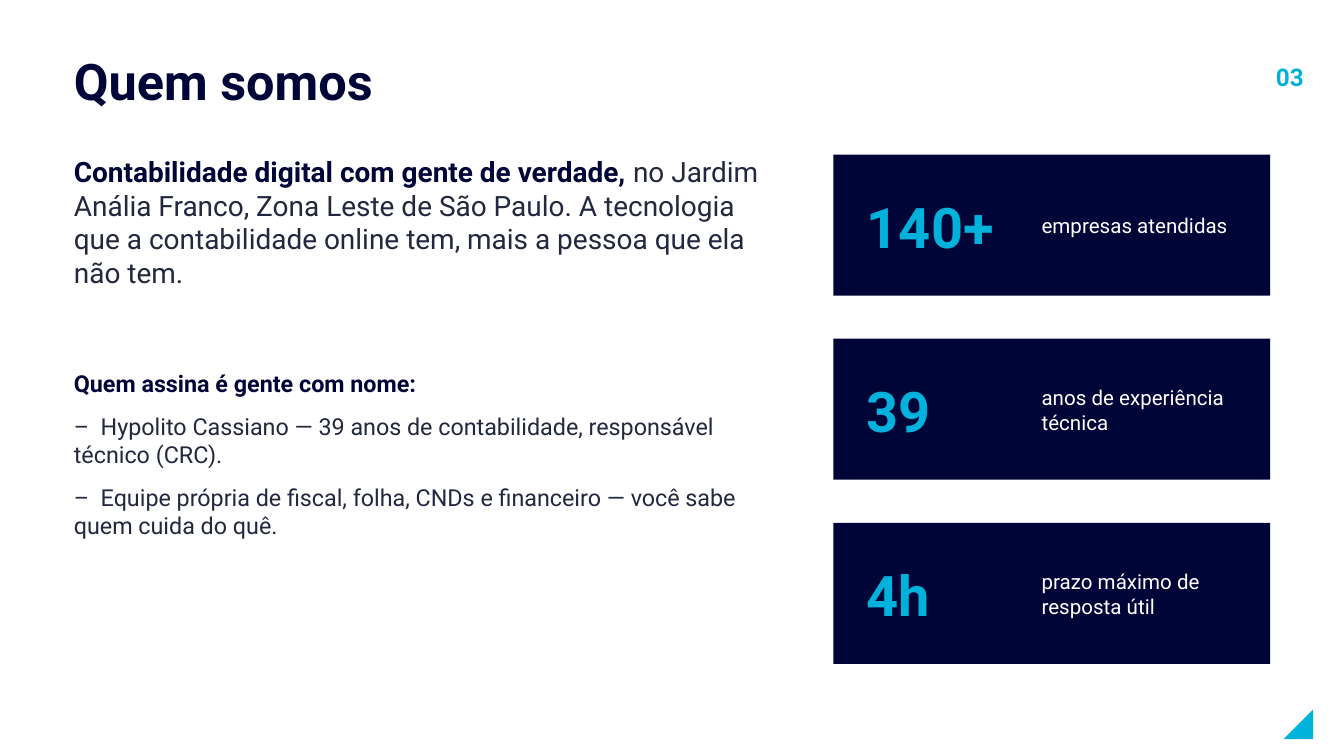
from dataclasses import dataclass
from typing import NamedTuple

from lxml.etree import SubElement
from pptx import Presentation
from pptx.dml.color import RGBColor
from pptx.enum.shapes import MSO_SHAPE
from pptx.enum.text import MSO_ANCHOR, PP_ALIGN
from pptx.oxml.ns import qn
from pptx.util import Inches, Pt


@dataclass(frozen=True)
class Theme:
    font: str = "Roboto"
    navy: str = "000538"
    cyan: str = "00B1DC"
    ink: str = "23283F"
    white: str = "FFFFFF"
    title: float = 27
    page: float = 13
    lead: float = 15
    body: float = 12.5
    stat: float = 30
    label: float = 11


class Box(NamedTuple):
    left: float
    top: float
    width: float
    height: float


class Run(NamedTuple):
    text: str
    size: float
    color: str
    bold: bool = False


class Stat(NamedTuple):
    value: str
    label: str


THEME = Theme()
WIDTH = 10
HEIGHT = WIDTH * 9 / 16
MARGIN = 0.55
TOP = 1.15
COLUMN = 5.3
CARD = Box(6.2, TOP, 3.25, 1.05)
STEP = 1.37
DASH_TAB = 0.2


def place(box: Box) -> list:
    return [Inches(n) for n in box]


def add_text(slide, box: Box, lines: list[list[Run]],
             anchor=MSO_ANCHOR.MIDDLE, align=PP_ALIGN.LEFT, after: float = 0):
    frame = slide.shapes.add_textbox(*place(box)).text_frame
    layout = {"word_wrap": True, "vertical_anchor": anchor, "margin_left": 0,
              "margin_right": 0, "margin_top": 0, "margin_bottom": 0}
    for name, value in layout.items():
        setattr(frame, name, value)
    for i, line in enumerate(lines):
        para = frame.add_paragraph() if i else frame.paragraphs[0]
        para.alignment = align
        if after:
            para.space_after = Pt(after)
        if "\t" in line[0].text:
            add_tab(para, DASH_TAB)
        for part in line:
            run = para.add_run()
            run.text = part.text
            style = {"name": THEME.font, "size": Pt(part.size), "bold": part.bold}
            for name, value in style.items():
                setattr(run.font, name, value)
            run.font.color.rgb = RGBColor.from_string(part.color)


def add_tab(para, stop: float) -> None:
    tabs = SubElement(para._p.get_or_add_pPr(), qn("a:tabLst"))
    SubElement(tabs, qn("a:tab"), pos=str(Inches(stop)), algn="l")


def add_shape(slide, kind, box: Box, color: str):
    shape = slide.shapes.add_shape(kind, *place(box))
    shape.shadow.inherit = False
    shape.fill.solid()
    shape.fill.fore_color.rgb = RGBColor.from_string(color)
    shape.line.fill.background()
    return shape


def add_card(slide, top: float, stat: Stat) -> None:
    add_shape(slide, MSO_SHAPE.RECTANGLE, CARD._replace(top=top), THEME.navy)
    add_text(slide, Box(6.45, top + 0.08, 1.35, 0.9),
             [[Run(stat.value, THEME.stat, THEME.cyan, True)]])
    add_text(slide, Box(7.75, top + 0.08, 1.6, 0.9),
             [[Run(stat.label, THEME.label, THEME.white)]])


def main() -> None:
    deck = Presentation()
    deck.slide_width, deck.slide_height = Inches(WIDTH), Inches(HEIGHT)
    slide = deck.slides.add_slide(deck.slide_layouts[6])

    # Title, page number and corner mark
    add_text(slide, Box(MARGIN, 0.3, 8.4, 0.6),
             [[Run("Quem somos", THEME.title, THEME.navy, True)]])
    add_text(slide, Box(9.1, 0.32, 0.6, 0.5),
             [[Run("03", THEME.page, THEME.cyan, True)]], align=PP_ALIGN.RIGHT)
    mark = add_shape(slide, MSO_SHAPE.RIGHT_TRIANGLE,
                     Box(9.55, 5.28, 0.22, 0.22), THEME.cyan)
    mark.element.spPr.get_or_add_xfrm().set("flipH", "1")

    # Lead text
    add_text(slide, Box(MARGIN, TOP, COLUMN, 1.5), [[
        Run("Contabilidade digital com gente de verdade, ",
            THEME.lead, THEME.navy, True),
        Run("no Jardim Anália Franco, Zona Leste de São Paulo. A tecnologia "
            "que a contabilidade online tem, mais a pessoa que ela não tem.",
            THEME.lead, THEME.ink),
    ]], anchor=MSO_ANCHOR.TOP)

    # Team list
    team = [
        "Hypolito Cassiano — 39 anos de contabilidade, responsável técnico (CRC).",
        "Equipe própria de fiscal, folha, CNDs e financeiro — você sabe "
        "quem cuida do quê.",
    ]
    head = Run("Quem assina é gente com nome:", THEME.body, THEME.navy, True)
    items = [[Run(f"–\t{text}", THEME.body, THEME.ink)] for text in team]
    add_text(slide, Box(MARGIN, 2.75, COLUMN, 2.2), [[head], *items],
             anchor=MSO_ANCHOR.TOP, after=8)

    # Stat cards
    stats = [
        Stat("140+", "empresas atendidas"),
        Stat("39", "anos de experiência técnica"),
        Stat("4h", "prazo máximo de resposta útil"),
    ]
    for i, stat in enumerate(stats):
        add_card(slide, CARD.top + i * STEP, stat)

    deck.save("out.pptx")


if __name__ == "__main__":
    main()
